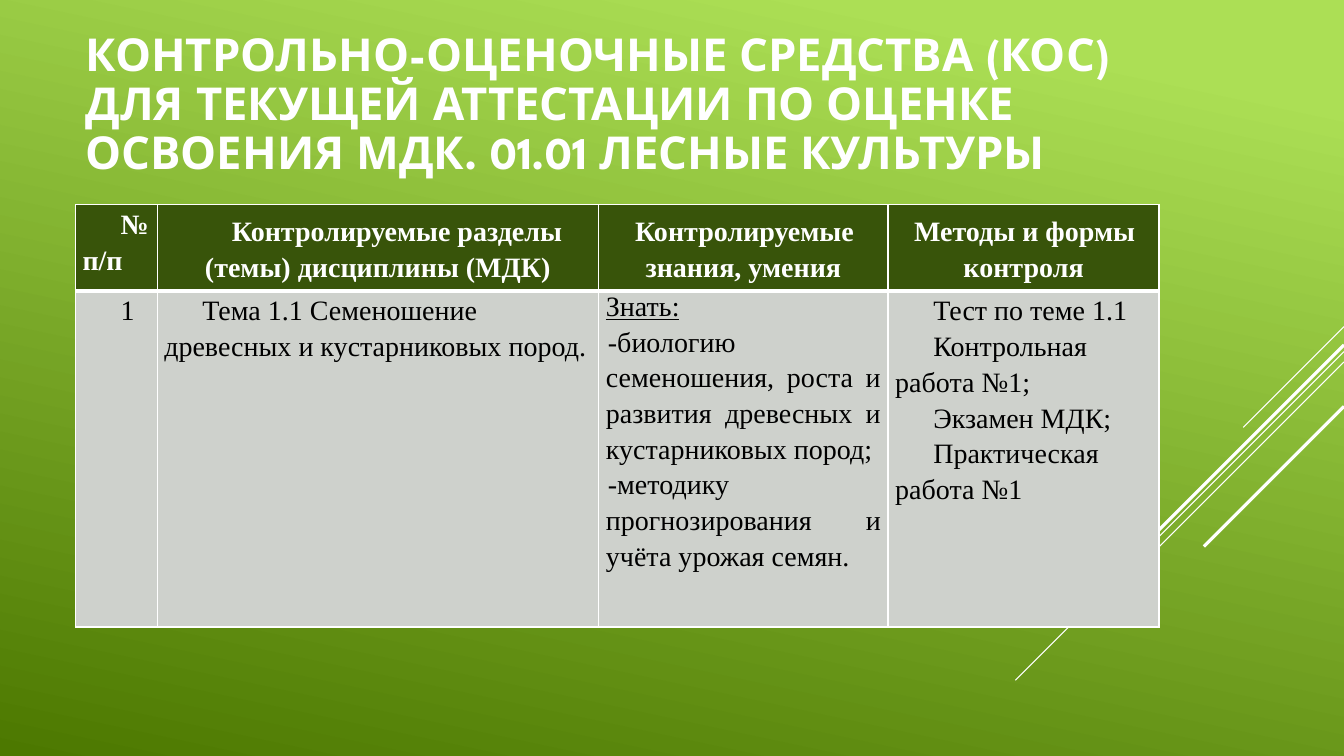
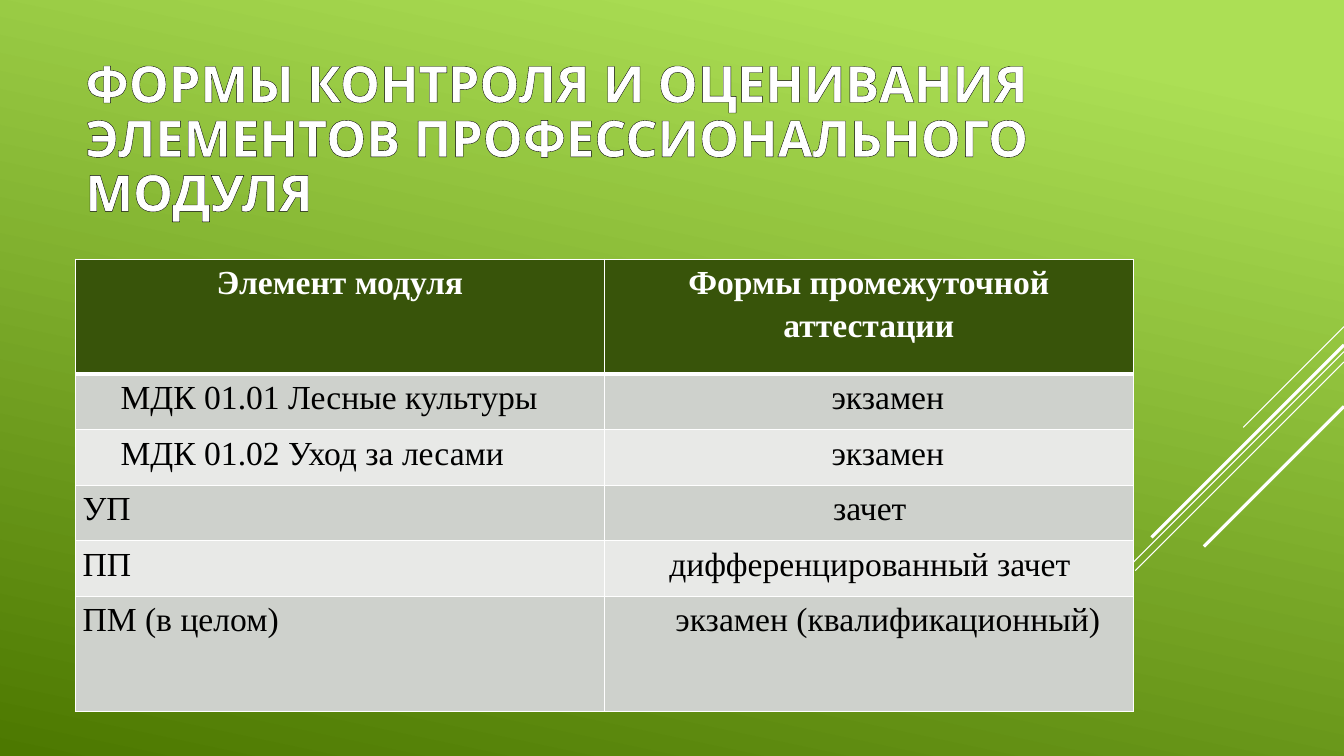
"""Builds two slides on assessment tools and forms of control for a forestry course."""
import dataclasses

import lxml.etree
import pptx
import pptx.dml.color
import pptx.enum.shapes
import pptx.enum.text
import pptx.oxml.ns
import pptx.util

Cm = pptx.util.Cm
Pt = pptx.util.Pt
RGBColor = pptx.dml.color.RGBColor
ALIGN = pptx.enum.text.PP_ALIGN
ANCHOR = pptx.enum.text.MSO_ANCHOR
qn = pptx.oxml.ns.qn

WHITE = RGBColor(0xFF, 0xFF, 0xFF)
BLACK = RGBColor(0x00, 0x00, 0x00)
LIME = RGBColor(0xAC, 0xDF, 0x55)
DEEP_GREEN = RGBColor(0x4C, 0x78, 0x00)
HEADER_GREEN = RGBColor(0x38, 0x54, 0x0A)
BAND_DARK = RGBColor(0xCE, 0xD1, 0xCC)
BAND_LIGHT = RGBColor(0xE8, 0xE9, 0xE7)

TITLE_FONT = "League Spartan"
TABLE_FONT = "Times New Roman"
SLIDE_WIDTH = 33.87
LEFT = 1.9
TITLE_WIDTH = 26.7
INDENT = 0.96
SLIGHT = 0.05
RAYS = [(8.23, 2.54, 0.75), (8.86, 8.28, 0.75), (9.12, 5.26, 0.75),
        (8.69, 4.85, 2.25), (10.24, 3.53, 2.25)]


@dataclasses.dataclass
class Passage:
    """A paragraph of a table cell."""
    text: str
    indent: float = 0
    align: ALIGN = ALIGN.LEFT
    spacing: float = 1.15
    underline: bool = False


def centred(text, indent=0):
    """Returns a centred passage."""
    return Passage(text, indent, ALIGN.CENTER)


def add_solid_line(parent, tag, color, width):
    """Adds an outline element of a solid colour."""
    line = lxml.etree.SubElement(parent, qn(tag), w=str(Pt(width)))
    fill = lxml.etree.SubElement(line, qn("a:solidFill"))
    lxml.etree.SubElement(fill, qn("a:srgbClr"), val=str(color))
    return line


def style_master(master, slide):
    """Gives the master its gradient and its diagonal rays, drawn by way of a slide."""
    fill = master.background.fill
    fill.gradient()
    fill.gradient_angle = 360 - 102
    for stop, color, position in zip(fill.gradient_stops, (LIME, DEEP_GREEN), (0.1, 1)):
        stop.color.rgb = color
        stop.position = position
    for number, (top, reach, width) in enumerate(RAYS):
        ray = slide.shapes.add_connector(
            pptx.enum.shapes.MSO_CONNECTOR.STRAIGHT,
            Cm(SLIDE_WIDTH), Cm(top), Cm(SLIDE_WIDTH - reach), Cm(top + reach))
        ray.line.color.rgb = WHITE
        ray.line.width = Pt(width)
        lxml.etree.SubElement(ray.element.spPr, qn("a:effectLst"))
        ray.element.xpath(".//p:cNvPr")[0].set("id", str(20 + number))
        master.shapes.element.insert(2 + number, ray.element)


def set_title(slide, text, top, height, size, bottom_inset=0.13, outlined=False):
    """Fills, places and formats the title placeholder."""
    title = slide.shapes.title
    title.left, title.top = Cm(LEFT), Cm(top)
    title.width, title.height = Cm(TITLE_WIDTH), Cm(height)
    frame = title.text_frame
    frame.text = text
    frame.word_wrap = True
    frame.auto_size = pptx.enum.text.MSO_AUTO_SIZE.NONE
    frame.vertical_anchor = ANCHOR.MIDDLE
    frame.margin_bottom = Cm(bottom_inset)
    paragraph = frame.paragraphs[0]
    paragraph.alignment = ALIGN.LEFT
    paragraph.line_spacing = 0.9
    font = paragraph.font
    font.name, font.size, font.bold = TITLE_FONT, Pt(size), True
    font.color.rgb = WHITE
    if outlined:
        properties = paragraph.runs[0].font._element
        properties.insert(0, add_solid_line(properties, "a:ln", BLACK, 0.25))


def write_passage(paragraph, passage, size, space_after, is_header):
    """Writes one passage into a paragraph of a cell."""
    paragraph.text = passage.text
    paragraph.alignment = passage.align
    paragraph.line_spacing = passage.spacing
    paragraph.space_after = Pt(space_after)
    paragraph._p.get_or_add_pPr().set("indent", str(Cm(passage.indent)))
    font = paragraph.font
    font.name, font.size, font.bold = TABLE_FONT, Pt(size), is_header
    font.underline = passage.underline
    font.color.rgb = WHITE if is_header else BLACK


def style_cell(cell, row):
    """Sets the insets, borders and fill of a cell according to its row."""
    cell.margin_left = cell.margin_right = Cm(0.18)
    cell.margin_top = cell.margin_bottom = 0
    widths = {"a:lnL": 1, "a:lnR": 1, "a:lnT": 3 if row == 1 else 1, "a:lnB": 3 if row == 0 else 1}
    for tag, width in widths.items():
        add_solid_line(cell._tc.get_or_add_tcPr(), tag, WHITE, width)
    cell.fill.solid()
    band = BAND_DARK if row % 2 else BAND_LIGHT
    cell.fill.fore_color.rgb = HEADER_GREEN if row == 0 else band


def add_grid(slide, top, widths, heights, content, size, space_after=0):
    """Adds a table whose cells are lists of passages and returns it."""
    table = slide.shapes.add_table(
        len(heights), len(widths), Cm(LEFT), Cm(top), Cm(sum(widths)), Cm(sum(heights))).table
    table.horz_banding = False
    for column, width in zip(table.columns, widths):
        column.width = Cm(width)
    for row, (height, cells) in enumerate(zip(heights, content)):
        table.rows[row].height = Cm(height)
        for column, passages in enumerate(cells):
            cell = table.cell(row, column)
            style_cell(cell, row)
            frame = cell.text_frame
            for index, passage in enumerate(passages):
                paragraph = frame.add_paragraph() if index else frame.paragraphs[0]
                write_passage(paragraph, passage, size, space_after, row == 0)
    return table


def fill_assessment_tools(slide):
    """Fills the slide on tools for current assessment."""
    set_title(slide, "КОНТРОЛЬНО-ОЦЕНОЧНЫЕ СРЕДСТВА (КОС) ДЛЯ ТЕКУЩЕЙ АТТЕСТАЦИИ "
              "ПО ОЦЕНКЕ ОСВОЕНИЯ МДК. 01.01 ЛЕСНЫЕ КУЛЬТУРЫ",
              0.51, 5.69, 32.4, bottom_inset=1.5)
    headings = [
        [Passage("№ п/п", INDENT)],
        [centred("Контролируемые разделы (темы) дисциплины (МДК)", INDENT)],
        [centred("Контролируемые знания, умения", SLIGHT)],
        [centred("Методы и формы контроля", SLIGHT)],
    ]
    skills = ["-биологию семеношения, роста и развития древесных и кустарниковых пород;",
              "-методику прогнозирования и учёта урожая семян."]
    methods = ["Тест по теме 1.1", "Контрольная работа №1;", "Экзамен МДК;",
               "Практическая работа №1"]
    topic = [
        [Passage("1", INDENT)],
        [Passage("Тема 1.1 Семеношение древесных и кустарниковых пород.", INDENT)],
        [Passage("Знать:", spacing=1.0, underline=True)]
        + [Passage(skill, SLIGHT, ALIGN.JUSTIFY) for skill in skills],
        [Passage(method, INDENT) for method in methods],
    ]
    table = add_grid(slide, 5.16, [2.06, 11.13, 7.29, 6.83], [2.18, 8.46],
                     [headings, topic], 20)
    for column in range(1, 4):
        table.cell(0, column).vertical_anchor = ANCHOR.MIDDLE


def fill_control_forms(slide):
    """Fills the slide on forms of control for the module."""
    set_title(slide, "ФОРМЫ КОНТРОЛЯ И ОЦЕНИВАНИЯ ЭЛЕМЕНТОВ ПРОФЕССИОНАЛЬНОГО МОДУЛЯ",
              0.89, 5.31, 36, outlined=True)
    elements = [
        ("Элемент модуля", "Формы промежуточной аттестации", 0, 0),
        ("МДК 01.01 Лесные культуры", "экзамен", INDENT, INDENT),
        ("МДК 01.02 Уход за лесами", "экзамен", INDENT, INDENT),
        ("УП", "зачет", 0, SLIGHT),
        ("ПП", "дифференцированный зачет", 0, SLIGHT),
        ("ПМ (в целом)", "экзамен (квалификационный)", 0, INDENT),
    ]
    content = [
        [[Passage(element, element_indent, ALIGN.LEFT if row else ALIGN.CENTER)],
         [centred(form, form_indent)]]
        for row, (element, form, element_indent, form_indent) in enumerate(elements)
    ]
    add_grid(slide, 6.53, [13.33] * 2, [2.9] + [1.4] * 4 + [2.9], content, 24, space_after=10)


def main():
    """Builds and saves the presentation."""
    deck = pptx.Presentation()
    deck.slide_width, deck.slide_height = Cm(SLIDE_WIDTH), Cm(19.05)
    title_only = deck.slide_layouts[5]
    tools, forms = (deck.slides.add_slide(title_only) for _ in range(2))
    style_master(deck.slide_master, tools)
    fill_assessment_tools(tools)
    fill_control_forms(forms)
    deck.save("out.pptx")


if __name__ == "__main__":
    main()
